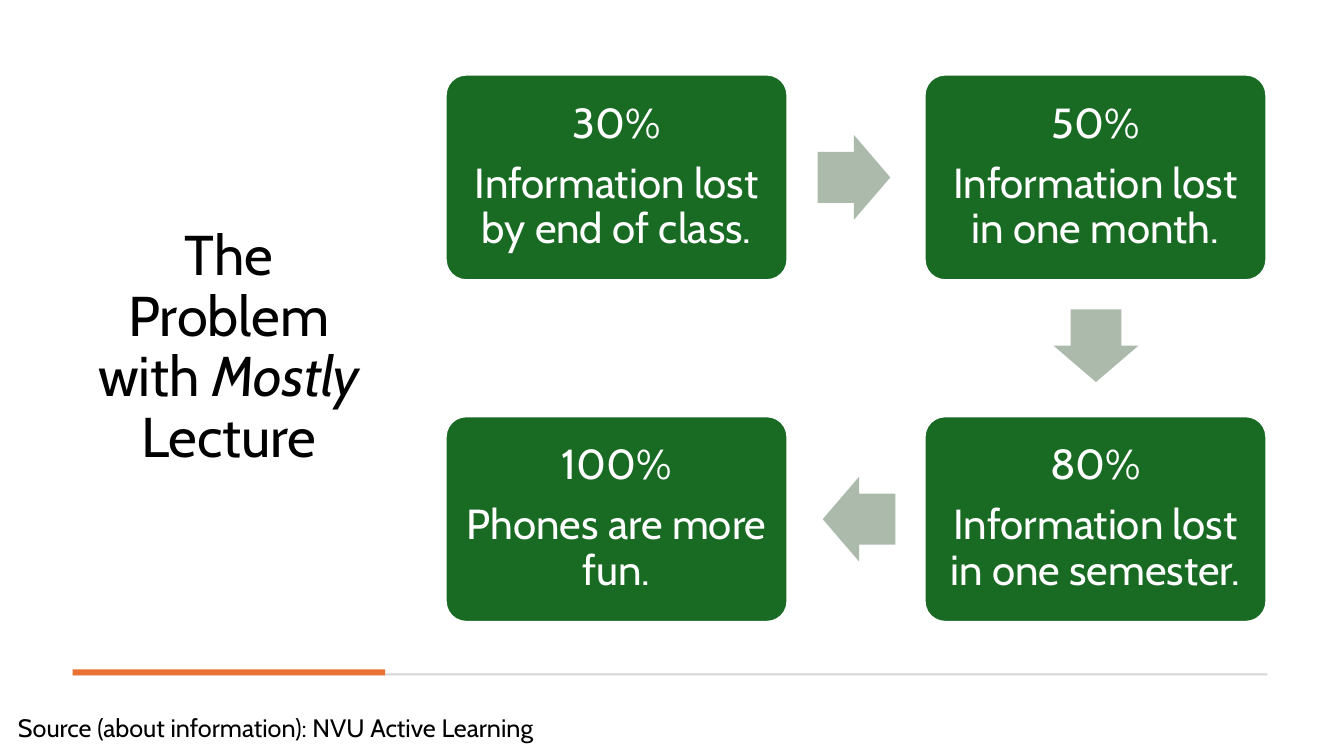
from pptx import Presentation
from pptx.dml.color import RGBColor
from pptx.enum.shapes import MSO_SHAPE
from pptx.enum.text import MSO_ANCHOR, MSO_AUTO_SIZE, PP_ALIGN
from pptx.util import Inches, Pt

COLORS = {
    "text": "000000",
    "white": "FFFFFF",
    "green": "196B24",
    "arrow": "ACBAAC",
    "orange": "E97132",
    "gray": "D5D5D5",
}
FONT = "Cabin"

presentation = Presentation()
presentation.slide_width = Inches(13.33)
presentation.slide_height = Inches(7.5)
slide = presentation.slides.add_slide(presentation.slide_layouts[5])


def add_filled_shape(kind, left, top, width, height, color):
    shape = slide.shapes.add_shape(
        kind, Inches(left), Inches(top), Inches(width), Inches(height))
    shape.shadow.inherit = False
    shape.fill.solid()
    shape.fill.fore_color.rgb = RGBColor.from_string(COLORS[color])
    shape.line.fill.background()
    return shape


def format_paragraph(paragraph, size, color, alignment, line_spacing):
    paragraph.font.name = FONT
    paragraph.font.size = Pt(size)
    paragraph.font.color.rgb = RGBColor.from_string(COLORS[color])
    paragraph.alignment = alignment
    paragraph.line_spacing = line_spacing


# Title
title = slide.shapes.title
title.left, title.top = Inches(0.72), Inches(0.47)
title.width, title.height = Inches(3.1), Inches(5.97)
title_frame = title.text_frame
title_frame.auto_size = MSO_AUTO_SIZE.NONE
title_frame.vertical_anchor = MSO_ANCHOR.MIDDLE
title_paragraph = title_frame.paragraphs[0]
for words, italic in [("The Problem with ", False), ("Mostly ", True), ("Lecture", False)]:
    run = title_paragraph.add_run()
    run.text = words
    run.font.italic = italic
format_paragraph(title_paragraph, 40, "text", PP_ALIGN.CENTER, 0.9)

# Rule with orange accent
add_filled_shape(MSO_SHAPE.RECTANGLE, 0.72, 6.68, 11.85, 0.02, "gray")
add_filled_shape(MSO_SHAPE.RECTANGLE, 0.72, 6.64, 3.1, 0.06, "orange")

# Boxes, clockwise from the top left
COLUMNS = (4.42, 9.17)
ROWS = (0.74, 4.13)
boxes = [
    (0, 0, "30%", "Information lost by end of class."),
    (1, 0, "50%", "Information lost in one month."),
    (1, 1, "80%", "Information lost in one semester."),
    (0, 1, "100%", "Phones are more fun."),
]
for column, row, percent, statement in boxes:
    box = add_filled_shape(
        MSO_SHAPE.ROUNDED_RECTANGLE, COLUMNS[column], ROWS[row], 3.39, 2.04, "green")
    box.adjustments[0] = 0.1
    box.line.color.rgb = RGBColor.from_string(COLORS["white"])
    box.line.width = Pt(1.5)
    frame = box.text_frame
    frame.word_wrap = True
    frame.vertical_anchor = MSO_ANCHOR.MIDDLE
    frame.margin_left = frame.margin_right = Inches(0.12)
    frame.margin_top = frame.margin_bottom = Inches(0.12)
    frame.text = f"{percent}\n{statement}"
    for paragraph in frame.paragraphs:
        format_paragraph(paragraph, 30, "white", PP_ALIGN.CENTER, 0.9)
        paragraph.space_after = Pt(10.5)

# Arrows between the boxes
for left, top, rotation in [(8.11, 1.34, 0), (10.51, 3.01, 90), (8.16, 4.73, 180)]:
    arrow = add_filled_shape(MSO_SHAPE.RIGHT_ARROW, left, top, 0.72, 0.84, "arrow")
    arrow.adjustments[0] = 0.6
    arrow.adjustments[1] = 0.5
    arrow.rotation = rotation

# Source line
source = slide.shapes.add_textbox(Inches(0.08), Inches(7.02), Inches(5.44), Inches(0.4))
source.text_frame.word_wrap = False
source.text_frame.text = "Source (about information): NVU Active Learning"
format_paragraph(source.text_frame.paragraphs[0], 18, "text", PP_ALIGN.LEFT, 1.0)

presentation.save("out.pptx")
